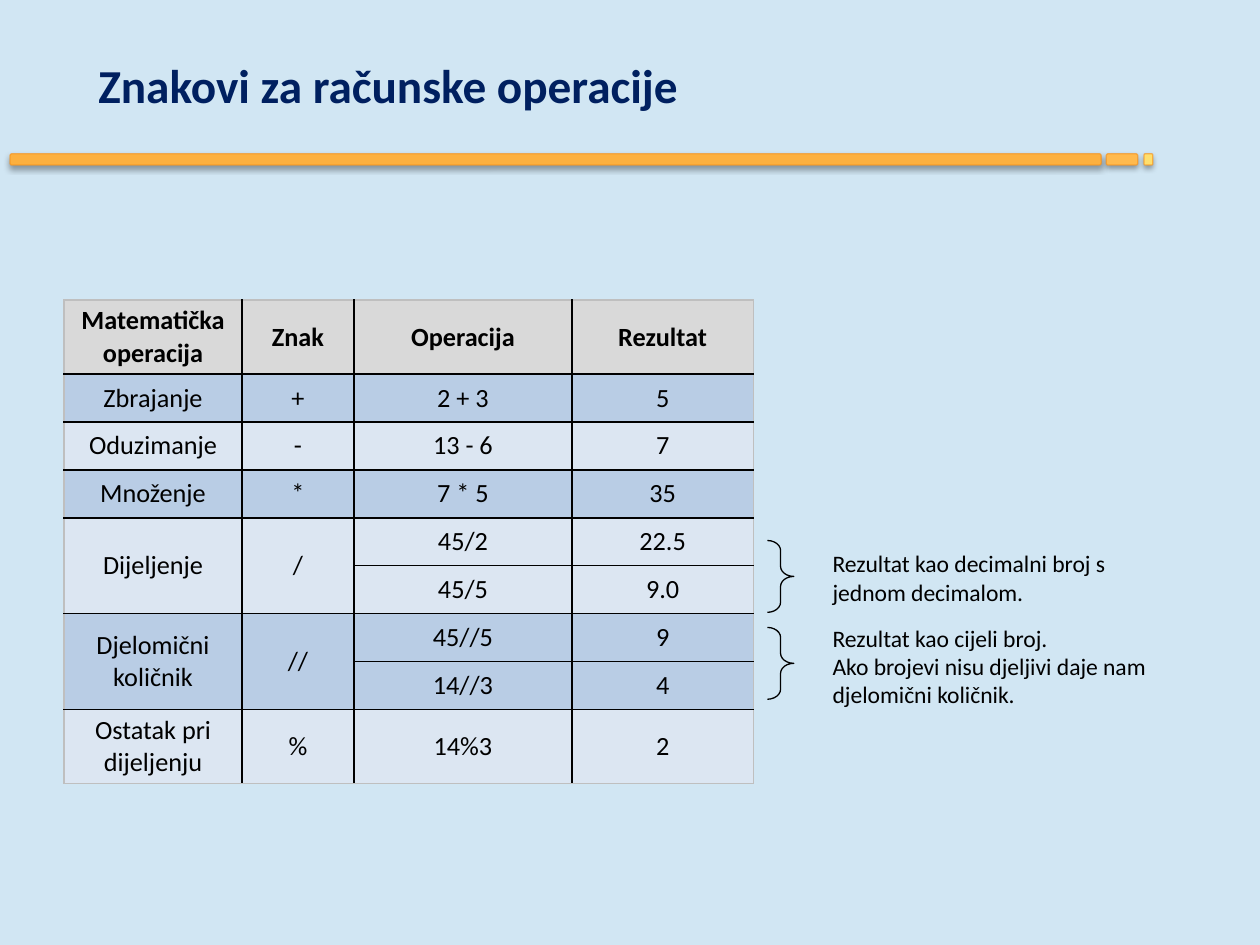
from dataclasses import dataclass

from lxml.etree import SubElement
from pptx import Presentation
from pptx.dml.color import RGBColor
from pptx.enum.shapes import MSO_SHAPE
from pptx.enum.text import MSO_ANCHOR, MSO_AUTO_SIZE, PP_ALIGN
from pptx.oxml.ns import qn
from pptx.util import Inches, Pt


@dataclass(frozen=True)
class Theme:
    """Colours, font and type sizes of the slide."""
    font: str = "Calibri"
    background: str = "D1E6F3"
    title: str = "002060"
    text: str = "000000"
    bar_line: str = "F7941D"
    bar_fills: tuple = ("FCB03F", "FFBA4E", "FFDF6D")
    header_fill: str = "D9D9D9"
    row_fills: tuple = ("B9CDE5", "DCE6F2")
    inner_border: str = "000000"
    outer_border: str = "BFBFBF"
    title_size: float = 27
    table_size: float = 15
    note_size: float = 13.5


THEME = Theme()
HEADERS = ("Matematička operacija", "Znak", "Operacija", "Rezultat")
OPERATIONS = (
    ("Zbrajanje", "+", (("2 + 3", "5"),)),
    ("Oduzimanje", "-", (("13 - 6", "7"),)),
    ("Množenje", "*", (("7 * 5", "35"),)),
    ("Dijeljenje", "/", (("45/2", "22.5"), ("45/5", "9.0"))),
    ("Djelomični količnik", "//", (("45//5", "9"), ("14//3", "4"))),
    ("Ostatak pri dijeljenju", "%", (("14%3", "2"),)),
)
COLUMN_WIDTHS = (1.41, 0.89, 1.73, 1.44)
ROW_HEIGHTS = (0.59, *[0.38] * 7, 0.59)


def color(value):
    """Turn a hex string into a colour."""
    return RGBColor.from_string(value)


def format_text(text_frame, size, text_color, bold=False, alignment=PP_ALIGN.LEFT):
    """Apply one look to every run of a text frame."""
    for paragraph in text_frame.paragraphs:
        paragraph.alignment = alignment
        for run in paragraph.runs:
            run.font.name = THEME.font
            run.font.size = Pt(size)
            run.font.bold = bold
            run.font.color.rgb = color(text_color)


def add_soft_shadow(shape):
    """Give a shape a soft shadow falling straight down."""
    shape.shadow.inherit = False
    effects = shape._element.spPr.find(qn("a:effectLst"))
    shadow = SubElement(effects, qn("a:outerShdw"), blurRad=str(Pt(3.1)),
                        dist=str(Pt(1.8)), dir="5400000", rotWithShape="0")
    shade = SubElement(shadow, qn("a:srgbClr"), val=THEME.text)
    SubElement(shade, qn("a:alpha"), val="35000")


def add_divider(slide, left, top, height):
    """Draw the row of shrinking orange bars under the title."""
    for offset, width, fill in zip((0, 8.7, 9), (8.66, 0.25, 0.07), THEME.bar_fills):
        bar = slide.shapes.add_shape(
            MSO_SHAPE.ROUNDED_RECTANGLE, Inches(left + offset), Inches(top),
            Inches(width), Inches(height))
        bar.fill.solid()
        bar.fill.fore_color.rgb = color(fill)
        bar.line.width = Pt(0.75)
        bar.line.color.rgb = color(THEME.bar_line)
        line_color = bar.line._ln.find(".//" + qn("a:srgbClr"))
        SubElement(line_color, qn("a:alpha"), val="65000")
        add_soft_shadow(bar)


def add_title(slide, left, top, width, height):
    """Place and format the title placeholder."""
    title = slide.shapes.title
    title.left, title.top = Inches(left), Inches(top)
    title.width, title.height = Inches(width), Inches(height)
    text_frame = title.text_frame
    text_frame.text = "Znakovi za računske operacije"
    text_frame.vertical_anchor = MSO_ANCHOR.TOP
    text_frame.auto_size = MSO_AUTO_SIZE.NONE
    format_text(text_frame, THEME.title_size, THEME.title, bold=True)


def set_borders(cell, outer_edges):
    """Draw the four borders of a cell, paler on the outer edges."""
    properties = cell._tc.get_or_add_tcPr()
    for edge in ("L", "R", "T", "B"):
        border = SubElement(properties, qn(f"a:ln{edge}"), w=str(Pt(1)))
        fill = SubElement(border, qn("a:solidFill"))
        shade = THEME.outer_border if edge in outer_edges else THEME.inner_border
        SubElement(fill, qn("a:srgbClr"), val=shade)


def fill_cell(cell, text, fill, bold):
    """Write and format one table cell."""
    cell.text_frame.text = text
    cell.vertical_anchor = MSO_ANCHOR.MIDDLE
    cell.margin_left = cell.margin_right = Inches(0.07)
    cell.margin_top = cell.margin_bottom = Inches(0.04)
    cell.fill.solid()
    cell.fill.fore_color.rgb = color(fill)
    format_text(cell.text_frame, THEME.table_size, THEME.text, bold, PP_ALIGN.CENTER)


def table_rows():
    """List the texts and fill of each table row."""
    rows = [(HEADERS, THEME.header_fill)]
    for index, (name, sign, examples) in enumerate(OPERATIONS):
        for position, example in enumerate(examples):
            labels = ("", "") if position else (name, sign)
            rows.append(((*labels, *example), THEME.row_fills[index % 2]))
    return rows


def add_operations_table(slide, left, top, width, height):
    """Build the table of operations, merging labels over their examples."""
    rows = table_rows()
    last_row, last_column = len(rows) - 1, len(HEADERS) - 1
    table = slide.shapes.add_table(
        len(rows), len(HEADERS), Inches(left), Inches(top),
        Inches(width), Inches(height)).table
    table.first_row = table.horz_banding = False
    for column, column_width in zip(table.columns, COLUMN_WIDTHS):
        column.width = Inches(column_width)
    for row, row_height in zip(table.rows, ROW_HEIGHTS):
        row.height = Inches(row_height)
    for row_index, (texts, fill) in enumerate(rows):
        for column_index, text in enumerate(texts):
            cell = table.cell(row_index, column_index)
            edges = {"L": column_index == 0, "R": column_index == last_column,
                     "T": row_index == 0, "B": row_index == last_row}
            set_borders(cell, [edge for edge, outer in edges.items() if outer])
            fill_cell(cell, text, fill, bold=row_index == 0)
    first_row = 1
    for _, _, examples in OPERATIONS:
        if len(examples) > 1:
            for column_index in range(2):
                table.cell(first_row, column_index).merge(
                    table.cell(first_row + len(examples) - 1, column_index))
        first_row += len(examples)


def add_brace(slide, left, top, width, height):
    """Draw a thin brace that opens towards the table."""
    brace = slide.shapes.add_shape(
        MSO_SHAPE.RIGHT_BRACE, Inches(left), Inches(top), Inches(width), Inches(height))
    brace.adjustments[0] = 0.38
    brace.fill.background()
    brace.line.color.rgb = color(THEME.text)
    brace.line.width = Pt(0.75)
    brace.shadow.inherit = False


def add_note(slide, text, left, top, width, height):
    """Write a note beside a brace."""
    text_frame = slide.shapes.add_textbox(
        Inches(left), Inches(top), Inches(width), Inches(height)).text_frame
    text_frame.word_wrap = True
    text_frame.auto_size = MSO_AUTO_SIZE.SHAPE_TO_FIT_TEXT
    text_frame.text = text
    format_text(text_frame, THEME.note_size, THEME.text)


def main():
    """Build and save the slide."""
    presentation = Presentation()
    presentation.slide_width, presentation.slide_height = Inches(10), Inches(7.5)
    slide = presentation.slides.add_slide(presentation.slide_layouts[5])
    slide.background.fill.solid()
    slide.background.fill.fore_color.rgb = color(THEME.background)
    add_divider(slide, 0.08, 1.22, 0.09)
    add_title(slide, 0.68, 0.4, 9, 1.01)
    add_operations_table(slide, 0.51, 2.38, sum(COLUMN_WIDTHS), sum(ROW_HEIGHTS))
    for top in (4.29, 4.98):
        add_brace(slide, 6.09, top, 0.21, 0.57)
    add_note(slide, "Rezultat kao decimalni broj s jednom decimalom.",
             6.51, 4.31, 2.68, 0.56)
    add_note(slide, "Rezultat kao cijeli broj.\n"
             "Ako brojevi nisu djeljivi daje nam djelomični količnik.",
             6.51, 4.9, 3.28, 0.78)
    presentation.save("out.pptx")


if __name__ == "__main__":
    main()
